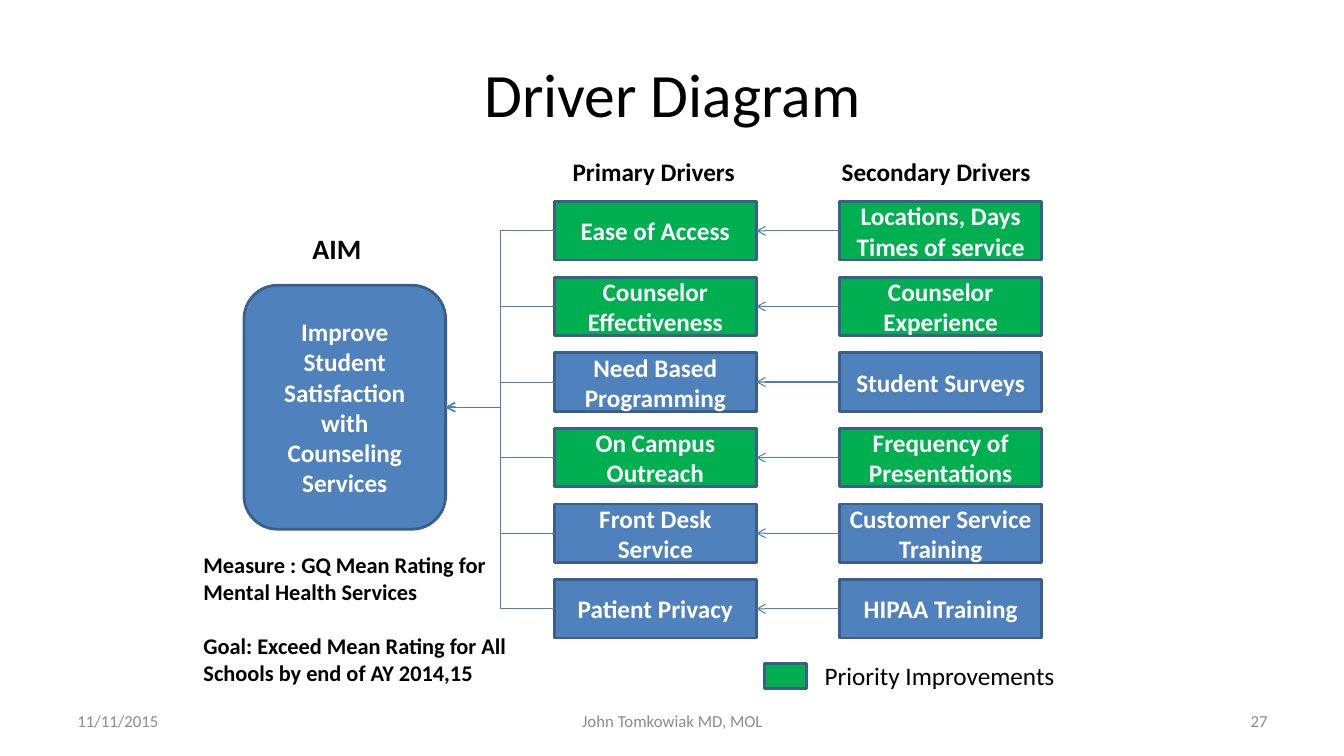
"""Builds the driver diagram slide."""
from lxml import etree
from pptx import Presentation
from pptx import util as u
from pptx.dml.color import RGBColor
from pptx.enum import shapes, text
from pptx.oxml.ns import qn

COLORS = {"ink": "000000", "muted": "8C8C8C", "white": "FFFFFF", "blue": "4F81BD",
          "priority": "00B050", "border": "3A5F8C", "link": "4B7EBC"}
FONT = "Calibri"
LEFT, CENTER, RIGHT = text.PP_ALIGN.LEFT, text.PP_ALIGN.CENTER, text.PP_ALIGN.RIGHT
TOP, MIDDLE = text.MSO_ANCHOR.TOP, text.MSO_ANCHOR.MIDDLE
SITE_LEFT, SITE_RIGHT = 1, 3
ROW_PITCH, DRIVER_HEIGHT = 0.75, 0.58
DRIVERS = [
    ("Ease of Access", "Locations, Days Times of service", True),
    ("Counselor Effectiveness", "Counselor Experience", True),
    ("Need Based Programming", "Student Surveys", False),
    ("On Campus Outreach", "Frequency of Presentations", True),
    ("Front Desk Service", "Customer Service Training", False),
    ("Patient Privacy", "HIPAA Training", False),
]


def color(name):
    """Return the named colour."""
    return RGBColor.from_string(COLORS[name])


def inches(*lengths):
    """Convert numbers to lengths in inches."""
    return [u.Inches(length) for length in lengths]


def write(frame, lines, size, ink="ink", bold=False, align=LEFT, anchor=TOP, gap=0):
    """Fill a text frame with evenly styled paragraphs."""
    frame.word_wrap = True
    frame.vertical_anchor = anchor
    for index, line in enumerate(lines):
        paragraph = frame.add_paragraph() if index else frame.paragraphs[0]
        paragraph.text = line
        paragraph.alignment = align
        paragraph.space_before = u.Pt(gap if index else 0)
        font = paragraph.font
        font.name, font.size, font.bold = FONT, u.Pt(size), bold
        font.color.rgb = color(ink)


def add_label(slide, box, lines, size, **style):
    """Place a text box."""
    label = slide.shapes.add_textbox(*inches(*box))
    write(label.text_frame, lines, size, **style)


def add_block(slide, box, fill, caption="", outline=shapes.MSO_SHAPE.RECTANGLE):
    """Place a filled, bordered block with an optional caption."""
    block = slide.shapes.add_shape(outline, *inches(*box))
    block.shadow.inherit = False
    block.fill.solid()
    block.fill.fore_color.rgb = color(fill)
    block.line.color.rgb = color("border")
    block.line.width = u.Pt(2)
    if caption:
        write(block.text_frame, [caption], 18, "white", True, CENTER, MIDDLE)
    return block


def add_arrow(slide, source, target, kind):
    """Link the left side of source to the right side of target."""
    arrow = slide.shapes.add_connector(kind, 0, 0, 0, 0)
    arrow.begin_connect(source, SITE_LEFT)
    arrow.end_connect(target, SITE_RIGHT)
    arrow.line.color.rgb = color("link")
    arrow.line.width = u.Pt(0.75)
    properties = arrow._element.spPr
    etree.SubElement(properties.find(qn("a:ln")), qn("a:tailEnd"), type="arrow")
    etree.SubElement(properties, qn("a:effectLst"))


def add_aim(slide, left, top):
    """Place the aim, its heading and its measures; return the aim block."""
    add_label(slide, (left + 0.58, top - 0.58, 0.75, 0.44), ["AIM"], 20, bold=True)
    add_label(slide, (left - 0.5, top + 2.59, 3.33, 1.45),
              ["Measure : GQ Mean Rating for Mental Health Services",
               "Goal: Exceed Mean Rating for All Schools by end of AY 2014,15"],
              16, bold=True, gap=19.5)
    return add_block(slide, (left, top, 2, 2.42), "blue",
                     "Improve Student Satisfaction with Counseling Services",
                     shapes.MSO_SHAPE.ROUNDED_RECTANGLE)


def add_drivers(slide, left, top, aim):
    """Place both driver columns and link them towards the aim."""
    secondary_left = left + 2.83
    add_label(slide, (left + 0.08, top - 0.5, 1.92, 0.4), ["Primary Drivers"], 18, bold=True)
    add_label(slide, (secondary_left - 0.08, top - 0.5, 2.33, 0.4),
              ["Secondary Drivers"], 18, bold=True)
    for row, (primary_name, secondary_name, is_priority) in enumerate(DRIVERS):
        y = top + row * ROW_PITCH
        fill = "priority" if is_priority else "blue"
        primary = add_block(slide, (left, y, 2, DRIVER_HEIGHT), fill, primary_name)
        secondary = add_block(slide, (secondary_left, y, 2, DRIVER_HEIGHT), fill, secondary_name)
        add_arrow(slide, primary, aim, shapes.MSO_CONNECTOR.ELBOW)
        add_arrow(slide, secondary, primary, shapes.MSO_CONNECTOR.STRAIGHT)


def add_legend(slide, left, top):
    """Place the key to the priority colour."""
    add_block(slide, (left, top + 0.08, 0.42, 0.25), "priority")
    add_label(slide, (left + 0.5, top, 2.5, 0.4), ["Priority Improvements"], 18)


def add_footer(slide, top):
    """Place the date, author and page number."""
    for left, width, caption, align in [(0.67, 3.11, "11/11/2015", LEFT),
                                        (4.56, 4.22, "John Tomkowiak MD, MOL", CENTER),
                                        (9.56, 3.11, "27", RIGHT)]:
        add_label(slide, (left, top, width, 0.4), [caption], 12,
                  ink="muted", align=align, anchor=MIDDLE)


def main():
    """Build and save the presentation."""
    deck = Presentation()
    deck.slide_width, deck.slide_height = inches(13.33, 7.5)
    slide = deck.slides.add_slide(deck.slide_layouts[6])
    add_label(slide, (0.67, 0.3, 12, 1.25), ["Driver Diagram"], 44, align=CENTER, anchor=MIDDLE)
    aim = add_aim(slide, 2.42, 2.83)
    add_drivers(slide, 5.5, 2, aim)
    add_legend(slide, 7.58, 6.5)
    add_footer(slide, 6.95)
    deck.save("out.pptx")


if __name__ == "__main__":
    main()
